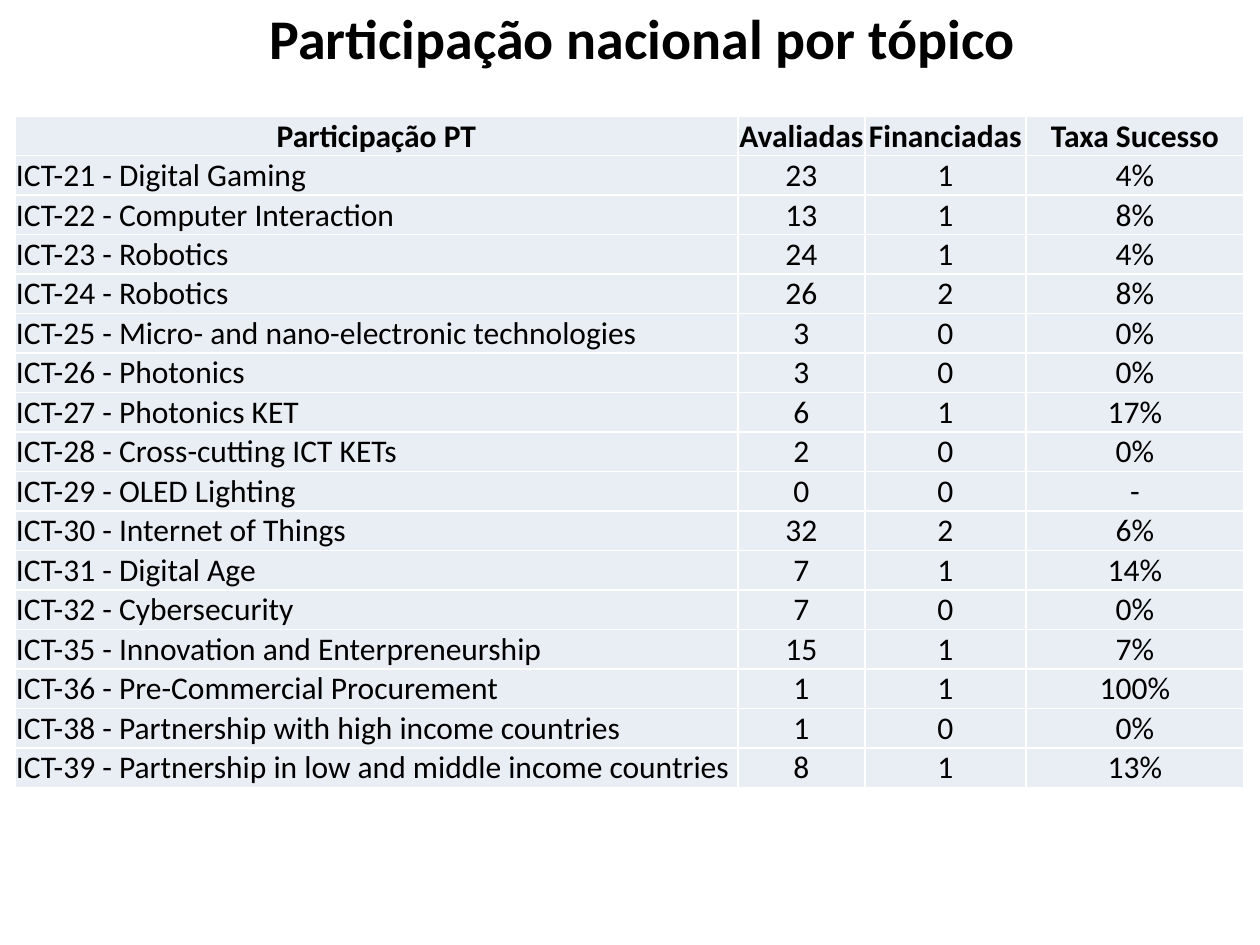
from lxml import etree
from pptx import Presentation
from pptx import util as u
from pptx.dml.color import RGBColor
from pptx.enum import text
from pptx.oxml.ns import qn

PX = u.Inches(1) / 126
FONT = "Calibri"
BLACK, WHITE, PALE = "000000", "FFFFFF", "E9EDF4"
LEFT, CENTER = text.PP_ALIGN.LEFT, text.PP_ALIGN.CENTER

COLUMN_WIDTHS = [723, 127, 161, 218]
HEADER = ("Participação PT", "Avaliadas", "Financiadas", "Taxa Sucesso")
TOPICS = [
    ("ICT-21 - Digital Gaming", "23", "1", "4%"),
    ("ICT-22 - Computer Interaction", "13", "1", "8%"),
    ("ICT-23 - Robotics", "24", "1", "4%"),
    ("ICT-24 - Robotics", "26", "2", "8%"),
    ("ICT-25 - Micro- and nano-electronic technologies", "3", "0", "0%"),
    ("ICT-26 - Photonics", "3", "0", "0%"),
    ("ICT-27 - Photonics KET", "6", "1", "17%"),
    ("ICT-28 - Cross-cutting ICT KETs", "2", "0", "0%"),
    ("ICT-29 - OLED Lighting", "0", "0", "-"),
    ("ICT-30 - Internet of Things", "32", "2", "6%"),
    ("ICT-31 - Digital Age", "7", "1", "14%"),
    ("ICT-32 - Cybersecurity", "7", "0", "0%"),
    ("ICT-35 - Innovation and Enterpreneurship", "15", "1", "7%"),
    ("ICT-36 - Pre-Commercial Procurement", "1", "1", "100%"),
    ("ICT-38 - Partnership with high income countries", "1", "0", "0%"),
    ("ICT-39 - Partnership in low and middle income countries", "8", "1", "13%"),
]


def px(n):
    return u.Emu(round(n * PX))


def color(hex_value):
    return RGBColor.from_string(hex_value)


def set_attrs(obj, values):
    for name, value in values.items():
        setattr(obj, name, value)


def write(p, content, size, bold, **paragraph_format):
    set_attrs(p, paragraph_format)
    r = p.add_run()
    r.text = content
    set_attrs(r.font, {"name": FONT, "size": u.Pt(size), "bold": bold})
    r.font.color.rgb = color(BLACK)


def add_title(s, content, left, top, width, height):
    tf = s.shapes.add_textbox(*map(px, (left, top, width, height))).text_frame
    set_attrs(tf, {"word_wrap": True,
                   "auto_size": text.MSO_AUTO_SIZE.SHAPE_TO_FIT_TEXT})
    write(tf.paragraphs[0], content, 32, True, alignment=CENTER,
          line_spacing=0.8, space_before=u.Pt(12), space_after=u.Pt(6))


def add_borders(cell, hex_value, points):
    # Border lines must come before the fill in the cell properties
    tc_pr = cell._tc.get_or_add_tcPr()
    for i, side in enumerate(("lnL", "lnR", "lnT", "lnB")):
        ln = etree.Element(qn(f"a:{side}"), w=str(u.Pt(points)))
        fill = etree.SubElement(ln, qn("a:solidFill"))
        etree.SubElement(fill, qn("a:srgbClr"), val=hex_value)
        tc_pr.insert(i, ln)


def format_cell(cell):
    set_attrs(cell, {"vertical_anchor": text.MSO_ANCHOR.MIDDLE,
                     "margin_left": px(1), "margin_right": px(1),
                     "margin_top": px(1), "margin_bottom": 0})
    cell.fill.solid()
    cell.fill.fore_color.rgb = color(PALE)
    add_borders(cell, WHITE, 1)


def add_topic_table(s, rows, left, top, height):
    frame = s.shapes.add_table(len(rows), len(COLUMN_WIDTHS), px(left), px(top),
                               px(sum(COLUMN_WIDTHS)), px(height))
    table = frame.table
    set_attrs(table, {"first_row": False, "horz_banding": False})
    for column, width in zip(table.columns, COLUMN_WIDTHS):
        column.width = px(width)
    for i, row in enumerate(rows):
        for j, content in enumerate(row):
            cell = table.cell(i, j)
            format_cell(cell)
            # Only topic names are left-aligned
            align = LEFT if i and j == 0 else CENTER
            write(cell.text_frame.paragraphs[0], content, 18, i == 0,
                  alignment=align)


def main():
    prs = Presentation()
    set_attrs(prs, {"slide_width": px(1260), "slide_height": px(945)})
    s = prs.slides.add_slide(prs.slide_layouts[6])

    # Participation figures by topic
    add_topic_table(s, [HEADER] + TOPICS, 15, 116, 665)

    # Slide title
    add_title(s, "Participação nacional por tópico", 57, 10, 1171, 68)

    prs.save("out.pptx")


if __name__ == "__main__":
    main()
